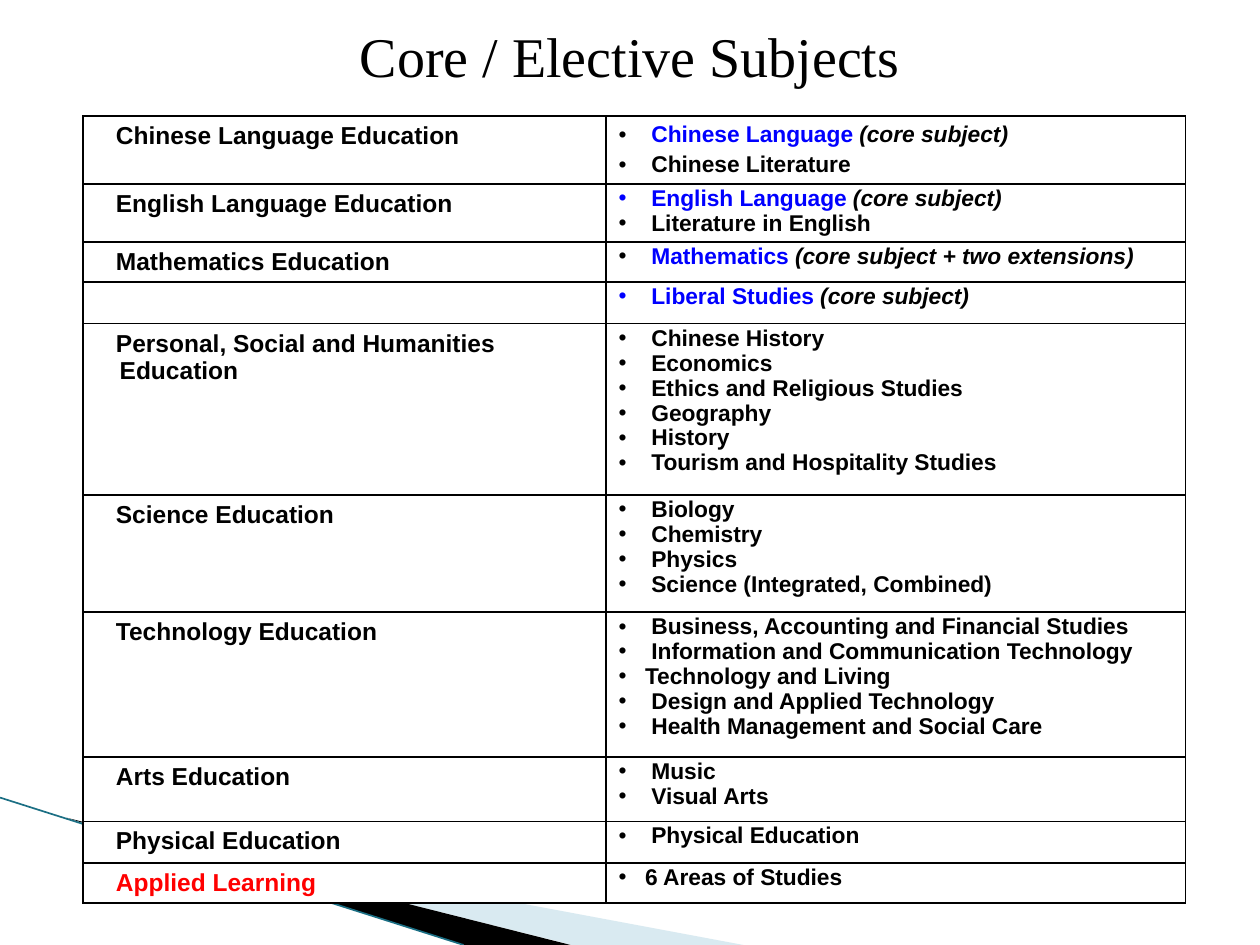
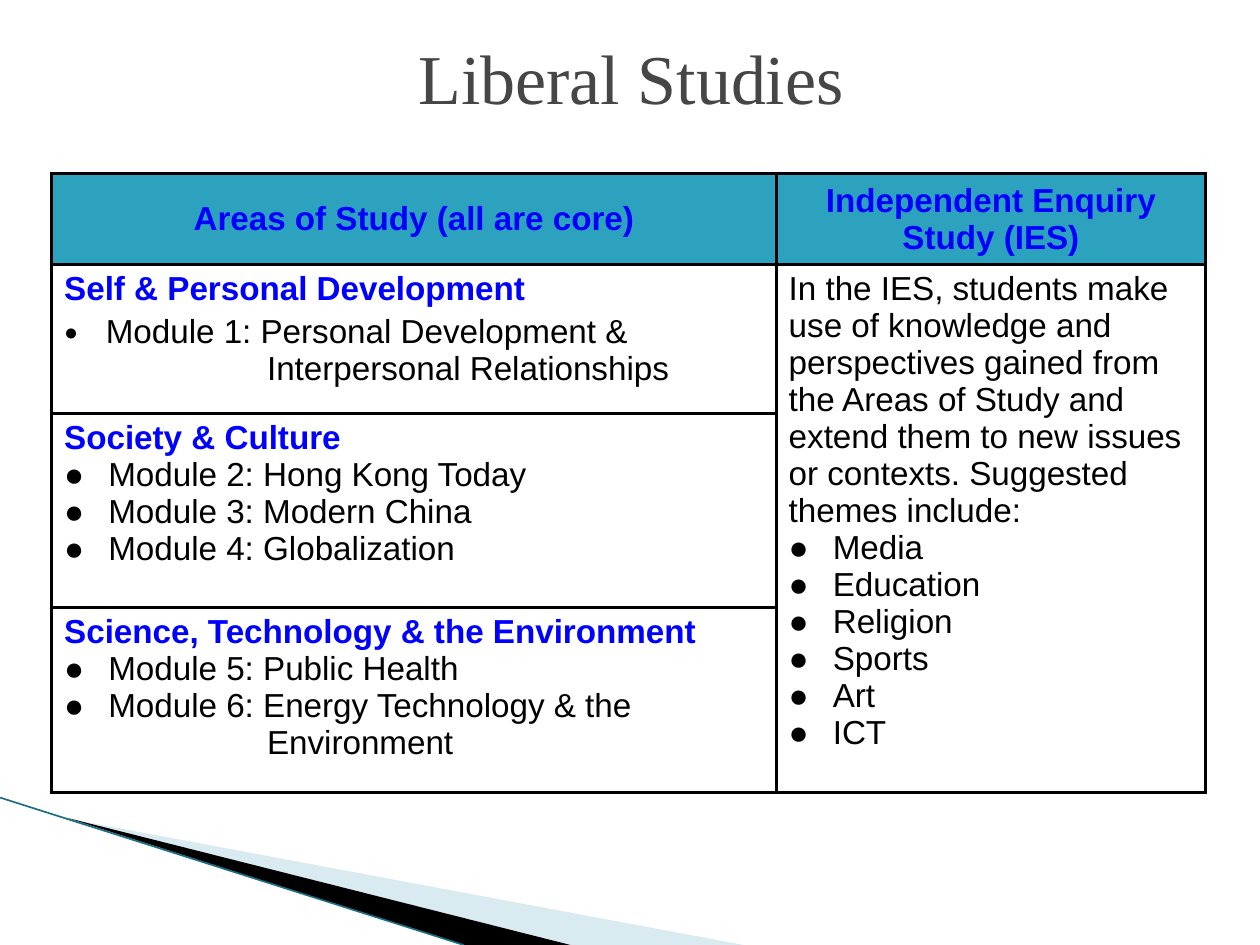
"""Build two slides on school subjects: the subject list and Liberal Studies."""
import pptx
import pptx.util
import pptx.dml.color
import pptx.enum.text
import pptx.enum.shapes
import pptx.oxml
import pptx.oxml.ns
import lxml.etree

Inches = pptx.util.Inches
Pt = pptx.util.Pt
qn = pptx.oxml.ns.qn
CENTER = pptx.enum.text.PP_ALIGN.CENTER
MIDDLE = pptx.enum.text.MSO_ANCHOR.MIDDLE
WIDTH, HEIGHT = 10, 7.5
BLACK, WHITE, BLUE, RED = "000000", "FFFFFF", "0000FF", "FF0000"
HEADER, PALE, TEAL, GREY = "2DA2BF", "A0CBDC", "1B6F84", "464646"


def rgb(code):
    """Turn a hex string into a colour."""
    return pptx.dml.color.RGBColor.from_string(code)


def write(cell, parts, size, bold=False, left=0.0, hang=0.0, bullet=None,
          bullet_colour=BLACK, bullet_size=100, before=0.0, spacing=None):
    """Write one paragraph of (text, colour, italic) parts in a cell."""
    frame = cell.text_frame
    paragraph = frame.add_paragraph() if frame.text else frame.paragraphs[0]
    if frame.text and before:
        paragraph.space_before = Pt(before)
    if spacing:
        paragraph.line_spacing = spacing
    properties = paragraph._p.get_or_add_pPr()
    properties.set("marL", str(Inches(left)))
    properties.set("indent", str(Inches(-hang)))
    if bullet:
        fill = lxml.etree.SubElement(properties, qn("a:buClr"))
        lxml.etree.SubElement(fill, qn("a:srgbClr"), val=bullet_colour)
        lxml.etree.SubElement(properties, qn("a:buSzPct"), val=str(bullet_size * 1000))
        lxml.etree.SubElement(properties, qn("a:buFont"), typeface="Arial")
        lxml.etree.SubElement(properties, qn("a:buChar"), char=bullet)
    paragraph.text = parts[0][0]
    for text, _, _ in parts[1:]:
        paragraph.add_run().text = text
    for run, (_, ink, italic) in zip(paragraph.runs, parts):
        run.font.name = "Arial"
        run.font.size = Pt(size)
        run.font.bold = bold
        run.font.italic = italic
        run.font.color.rgb = rgb(ink)
    return paragraph


subjects = [
    ("Chinese Language Education", 0.54, ["Chinese Language |(core subject)", "Chinese Literature"]),
    ("English Language Education", 0.46, ["English Language |(core subject)", "Literature in English"]),
    ("Mathematics Education", 0.32, ["Mathematics |(core subject + two extensions)"]),
    ("", 0.33, ["Liberal Studies |(core subject)"]),
    ("Personal, Social and Humanities Education", 1.36,
     ["Chinese History", "Economics", "Ethics and Religious Studies", "Geography", "History",
      "Tourism and Hospitality Studies"]),
    ("Science Education", 0.93, ["Biology", "Chemistry", "Physics", "Science (Integrated, Combined)"]),
    ("Technology Education", 1.15,
     ["Business, Accounting and Financial Studies", "Information and Communication Technology",
      "Technology and Living", "Design and Applied Technology",
      "Health Management and Social Care"]),
    ("Arts Education", 0.51, ["Music", "Visual Arts"]),
    ("Physical Education", 0.33, ["Physical Education"]),
    ("Applied Learning", 0.32, ["6 Areas of Studies"]),
]
areas = [
    ("Self & Personal Development",
     ["Module 1: Personal Development &|Interpersonal Relationships"]),
    ("Society & Culture",
     ["Module 2: Hong Kong Today", "Module 3: Modern China", "Module 4: Globalization"]),
    ("Science, Technology & the Environment",
     ["Module 5: Public Health", "Module 6: Energy Technology & the|Environment"]),
]
themes = ["Media", "Education", "Religion", "Sports", "Art", "ICT"]

layouts = [
    ("Core / Elective Subjects", (0, 0.12, 10, 0.63), 32, BLACK,
     (0.66, 0.92), [4.15, 4.6], [height for _, height, _ in subjects], 1),
    ("Liberal Studies", (0.51, -0.02, 9, 1.25), 40, GREY,
     (0.41, 1.38), [5.75, 3.41], [0.72, 1.18, 1.54, 1.47], 2),
]
wedges = [
    ([(0.55, 6.5), (5.9, HEIGHT), (4.54, HEIGHT)], PALE, 40),
    ([(0.53, 6.49), (4.53, HEIGHT), (3.68, HEIGHT)], BLACK, 100),
]

presentation = pptx.Presentation()
presentation.slide_width = Inches(WIDTH)
presentation.slide_height = Inches(HEIGHT)
tables = []

for title, box, title_size, title_colour, corner, columns, rows, border in layouts:
    slide = presentation.slides.add_slide(presentation.slide_layouts[5])
    slide.background.fill.solid()
    slide.background.fill.fore_color.rgb = rgb(WHITE)

    heading = slide.shapes.title
    heading.left, heading.top, heading.width, heading.height = map(Inches, box)
    heading.text_frame.text = title
    heading.text_frame.vertical_anchor = MIDDLE
    paragraph = heading.text_frame.paragraphs[0]
    paragraph.alignment = CENTER
    font = paragraph.runs[0].font
    font.name, font.size = "Times New Roman", Pt(title_size)
    font.color.rgb = rgb(title_colour)

    for points, wedge_colour, opacity in wedges:
        corners = [(Inches(x), Inches(y)) for x, y in points]
        builder = slide.shapes.build_freeform(*corners[0])
        builder.add_line_segments(corners[1:], close=True)
        wedge = builder.convert_to_shape()
        wedge.shadow.inherit = False
        wedge.fill.solid()
        wedge.fill.fore_color.rgb = rgb(wedge_colour)
        wedge.line.fill.background()
        if opacity < 100:
            tint = wedge._element.spPr.find(qn("a:solidFill"))[0]
            lxml.etree.SubElement(tint, qn("a:alpha"), val=str(opacity * 1000))

    edge = slide.shapes.add_connector(
        pptx.enum.shapes.MSO_CONNECTOR.STRAIGHT, 0, Inches(6.33), Inches(3.68), Inches(HEIGHT))
    edge.line.color.rgb = rgb(TEAL)
    edge.line.width = Pt(0.95)
    lxml.etree.SubElement(edge._element.spPr, qn("a:effectLst"))

    table = slide.shapes.add_table(
        len(rows), len(columns), *map(Inches, corner),
        Inches(sum(columns)), Inches(sum(rows))).table
    table.first_row = table.horz_banding = False
    for column, width in zip(table.columns, columns):
        column.width = Inches(width)
    for row, height in zip(table.rows, rows):
        row.height = Inches(height)
    for cell in table.iter_cells():
        properties = cell._tc.get_or_add_tcPr()
        for side in ("a:lnL", "a:lnR", "a:lnT", "a:lnB"):
            line = lxml.etree.SubElement(properties, qn(side), w=str(Pt(border)))
            paint = lxml.etree.SubElement(line, qn("a:solidFill"))
            lxml.etree.SubElement(paint, qn("a:srgbClr"), val=BLACK)
        cell.fill.solid()
        cell.fill.fore_color.rgb = rgb(WHITE)
    tables.append(table)

subject_table, study_table = tables

for index, (area, _, names) in enumerate(subjects):
    area_cell, subject_cell = subject_table.cell(index, 0), subject_table.cell(index, 1)
    if area:
        wrapped = area.startswith("Personal")
        write(area_cell, [(area, RED if area == "Applied Learning" else BLACK, False)], 14, bold=True,
              left=0.19 if wrapped else 0.16, hang=0.03 if wrapped else 0)
    else:
        area_cell.margin_top = area_cell.margin_bottom = 0
    for name in names:
        subject, _, note = name.partition("|")
        parts = [(subject, BLUE if note else BLACK, False)]
        if note:
            parts.append((note, BLACK, True))
        indent = 0.21 if name in ("Technology and Living", "6 Areas of Studies") else 0.26
        write(subject_cell, parts, 13, bold=True, left=indent, hang=indent, bullet="•",
              bullet_colour=BLUE if subject in ("English Language ", "Liberal Studies ") else BLACK,
              before=2.6, spacing=0.8 if index else None)

for index, header in enumerate(["Areas of Study (all are core)", "Independent Enquiry Study (IES)"]):
    cell = study_table.cell(0, index)
    cell.fill.fore_color.rgb = rgb(HEADER)
    cell.vertical_anchor = MIDDLE
    cell.margin_left = cell.margin_right = cell.margin_top = cell.margin_bottom = 0
    write(cell, [(header, BLUE, False)], 19, bold=True).alignment = CENTER

for index, (area, modules) in enumerate(areas):
    cell = study_table.cell(index + 1, 0)
    write(cell, [(area, BLUE, False)], 19, bold=True)
    indent, bullet_size, gap = (0.33, 70, 3.4) if index == 0 else (0.35, 100, 0)
    for module in modules:
        first, _, rest = module.partition("|")
        write(cell, [(first, BLACK, False)], 19, left=indent, hang=indent,
              bullet="●", bullet_size=bullet_size, before=gap)
        if rest:
            write(cell, [(rest, BLACK, False)], 19, left=1.61)

enquiry = study_table.cell(1, 1)
enquiry.merge(study_table.cell(3, 1))
write(enquiry, [("In the IES, students make use of knowledge and perspectives gained from the Areas of "
                 "Study and extend them to new issues or contexts. Suggested themes include:",
                 BLACK, False)], 19)
for theme in themes:
    write(enquiry, [(theme, BLACK, False)], 19, left=0.35, hang=0.35, bullet="●")

presentation.save("out.pptx")
